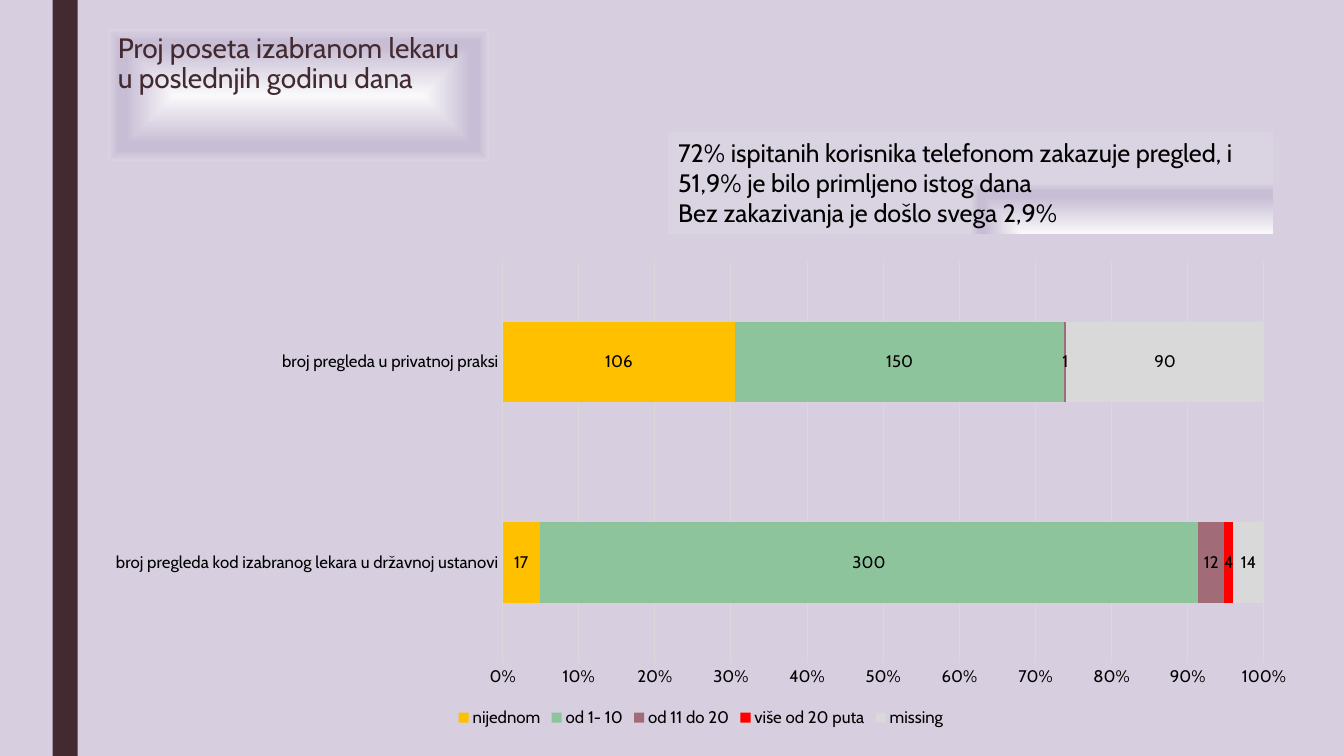
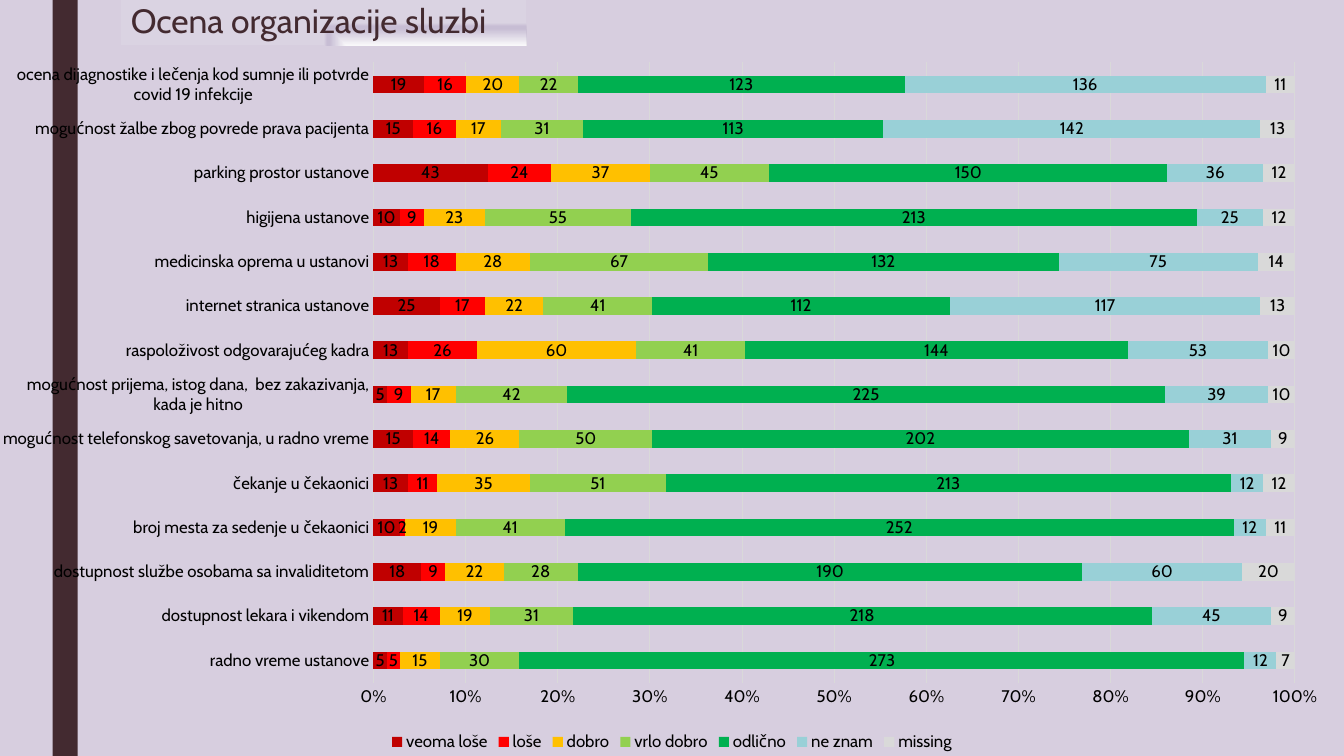
import dataclasses

import lxml.etree
import pptx
import pptx.chart.data
import pptx.dml.color
import pptx.enum.chart
import pptx.enum.shapes
import pptx.enum.text
import pptx.oxml.ns
import pptx.util

COLUMNS, ROWS = 160, 90


@dataclasses.dataclass(frozen=True)
class Theme:
    """Colours, font and type sizes shared by the slides."""
    font: str = "Cabin"
    background: str = "D7CEDF"
    dark: str = "432A30"
    text: str = "000000"
    grid: str = "D9D9D9"
    glow: tuple = ((0, "F9F8FA"), (74, "C7BDD4"), (83, "C7BDD4"), (100, "DAD3E2"))
    title_size: int = 20
    large_title_size: int = 24
    note_size: int = 18
    chart_size: int = 12
    title_spacing: float = 0.89


THEME = Theme()
CENTRE_GLOW = ("shape", (50, 50, 50, 50))
CORNER_GLOW = ("rect", (100, 100, 0, 0))

VISIT_GROUPS = ["broj pregleda kod izabranog lekara u državnoj ustanovi",
                "broj pregleda u privatnoj praksi"]
VISIT_SERIES = [
    ("nijednom", "FFC000", (17, 106)),
    ("od 1- 10", "8EC49C", (300, 150)),
    ("od 11 do 20", "A26B78", (12, 1)),
    ("više od 20 puta", "FF0000", (4, None)),
    ("missing", "D9D9D9", (14, 90)),
]
SERVICES = [
    "radno vreme ustanove",
    "dostupnost lekara i vikendom",
    "dostupnost službe osobama sa invaliditetom",
    "broj mesta za sedenje u čekaonici",
    "čekanje u čekaonici",
    "mogućnost telefonskog savetovanja, u radno vreme",
    "mogućnost prijema, istog dana,  bez zakazivanja, kada je hitno",
    "raspoloživost odgovarajućeg kadra",
    "internet stranica ustanove",
    "medicinska oprema u ustanovi",
    "higijena ustanove",
    "parking prostor ustanove",
    "mogućnost žalbe zbog povrede prava pacijenta",
    "ocena dijagnostike i lečenja kod sumnje ili potvrde covid 19 infekcije",
]
RATING_SERIES = [
    ("veoma loše", "C00000", (5, 11, 18, 10, 13, 15, 5, 13, 25, 13, 10, 43, 15, 19)),
    ("loše", "FF0000", (5, 14, 9, 2, 11, 14, 9, 26, 17, 18, 9, 24, 16, 16)),
    ("dobro", "FFC000", (15, 19, 22, 19, 35, 26, 17, 60, 22, 28, 23, 37, 17, 20)),
    ("vrlo dobro", "92D050", (30, 31, 28, 41, 51, 50, 42, 41, 41, 67, 55, 45, 31, 22)),
    ("odlično", "00B050",
     (273, 218, 190, 252, 213, 202, 225, 144, 112, 132, 213, 150, 113, 123)),
    ("ne znam", "99D0D7", (12, 45, 60, 12, 12, 31, 39, 53, 117, 75, 25, 36, 142, 136)),
    ("missing", "D9D9D9", (7, 9, 20, 11, 12, 9, 10, 10, 13, 14, 12, 12, 13, 11)),
]


def rgb(value):
    """Turn a hex string into a colour."""
    return pptx.dml.color.RGBColor.from_string(value)


def place(deck, box):
    """Turn a box in grid columns and rows into slide lengths."""
    column, row = deck.slide_width / COLUMNS, deck.slide_height / ROWS
    return [round(length * unit) for length, unit in zip(box, (column, row) * 2)]


def set_font(font, size, colour):
    """Apply the theme font with a size and a colour."""
    font.name = THEME.font
    font.size = pptx.util.Pt(size)
    font.color.rgb = rgb(colour)


def add_rectangle(deck, page, box):
    """Add a plain rectangle without line or shadow."""
    rectangle = page.shapes.add_shape(
        pptx.enum.shapes.MSO_SHAPE.RECTANGLE, *place(deck, box))
    rectangle.shadow.inherit = False
    rectangle.line.fill.background()
    return rectangle


def fill_glow(shape, glow):
    """Fill a shape with the theme's path gradient."""
    kind, edges = glow
    qn = pptx.oxml.ns.qn
    add = lxml.etree.SubElement
    shape.fill.background()
    properties = shape.element.spPr
    gradient = lxml.etree.Element(qn("a:gradFill"), rotWithShape="1")
    stops = add(gradient, qn("a:gsLst"))
    for position, colour in THEME.glow:
        stop = add(stops, qn("a:gs"), pos=str(position * 1000))
        add(stop, qn("a:srgbClr"), val=colour)
    focus = add(gradient, qn("a:path"), {"path": kind})
    add(focus, qn("a:fillToRect"),
        {side: str(edge * 1000) for side, edge in zip("ltrb", edges)})
    properties.replace(properties.find(qn("a:noFill")), gradient)


def add_panel(deck, page, box, lines, size, colour, glow, spacing=None):
    """Add a glowing panel with left-aligned text at its top."""
    panel = add_rectangle(deck, page, box)
    fill_glow(panel, glow)
    frame = panel.text_frame
    frame.word_wrap = True
    frame.vertical_anchor = pptx.enum.text.MSO_ANCHOR.TOP
    frame.text = "\n".join(lines)
    for para in frame.paragraphs:
        para.alignment = pptx.enum.text.PP_ALIGN.LEFT
        para.line_spacing = spacing
        set_font(para.font, size, colour)


def add_title(deck, page, box, title, size, glow):
    """Add the slide title on its panel."""
    add_panel(deck, page, box, [title], size, THEME.dark, glow, THEME.title_spacing)


def style_axes(chart):
    """Style the category and percentage axes."""
    for axis in (chart.category_axis, chart.value_axis):
        axis.major_tick_mark = pptx.enum.chart.XL_TICK_MARK.NONE
        axis.minor_tick_mark = pptx.enum.chart.XL_TICK_MARK.NONE
        set_font(axis.tick_labels.font, THEME.chart_size, THEME.text)
    chart.value_axis.has_major_gridlines = True
    for line in (chart.category_axis.format.line,
                 chart.value_axis.major_gridlines.format.line):
        line.color.rgb = rgb(THEME.grid)
        line.width = pptx.util.Pt(0.75)
    chart.value_axis.format.line.fill.background()
    chart.value_axis.tick_labels.number_format = "0%"
    chart.value_axis.tick_labels.number_format_is_linked = False


def add_share_chart(deck, page, box, categories, rows):
    """Add a 100% stacked bar chart with values and a legend."""
    data = pptx.chart.data.CategoryChartData()
    data.categories = categories
    for name, _, values in rows:
        data.add_series(name, values)
    chart = page.shapes.add_chart(
        pptx.enum.chart.XL_CHART_TYPE.BAR_STACKED_100, *place(deck, box), data).chart
    set_font(chart.font, THEME.chart_size, THEME.text)
    chart.has_title = False
    chart.has_legend = True
    chart.legend.position = pptx.enum.chart.XL_LEGEND_POSITION.BOTTOM
    chart.legend.include_in_layout = False
    set_font(chart.legend.font, THEME.chart_size, THEME.text)
    style_axes(chart)
    plot = chart.plots[0]
    plot.gap_width, plot.overlap, plot.vary_by_categories = 150, 100, False
    for series, (_, colour, _) in zip(plot.series, rows):
        series.format.fill.solid()
        series.format.fill.fore_color.rgb = rgb(colour)
        labels = series.data_labels
        labels.show_value = True
        labels.position = pptx.enum.chart.XL_LABEL_POSITION.CENTER
        set_font(labels.font, THEME.chart_size, THEME.text)


def add_page(deck):
    """Add a blank slide with the shared background and side band."""
    page = deck.slides.add_slide(deck.slide_layouts[6])
    page.background.fill.solid()
    page.background.fill.fore_color.rgb = rgb(THEME.background)
    band = add_rectangle(deck, page, (6.25, 0, 3, ROWS))
    band.fill.solid()
    band.fill.fore_color.rgb = rgb(THEME.dark)
    return page


def add_visits_page(deck):
    """Build the slide on visits to the doctor."""
    page = add_page(deck)
    add_title(deck, page, (12.85, 3.5, 45.35, 15.7),
              "Proj poseta izabranom lekaru u poslednjih godinu dana",
              THEME.title_size, CENTRE_GLOW)
    add_share_chart(deck, page, (10.9, 30, 145.1, 57.1), VISIT_GROUPS, VISIT_SERIES)
    add_panel(deck, page, (79.55, 15.75, 72, 12.1),
              ["72% ispitanih korisnika telefonom zakazuje pregled, i",
               "51,9% je bilo primljeno istog dana",
               "Bez zakazivanja je došlo svega 2,9%"],
              THEME.note_size, THEME.text, CORNER_GLOW)


def add_ratings_page(deck):
    """Build the slide on ratings of the service."""
    page = add_page(deck)
    add_title(deck, page, (14.4, 0, 48.25, 5.4), "Ocena organizacije sluzbi",
              THEME.large_title_size, CORNER_GLOW)
    add_share_chart(deck, page, (0, 5.75, COLUMNS, 84.25), SERVICES, RATING_SERIES)


def main():
    """Build and save the deck."""
    deck = pptx.Presentation()
    deck.slide_width = pptx.util.Inches(13.33)
    deck.slide_height = pptx.util.Inches(7.5)
    add_visits_page(deck)
    add_ratings_page(deck)
    deck.save("out.pptx")


if __name__ == "__main__":
    main()
